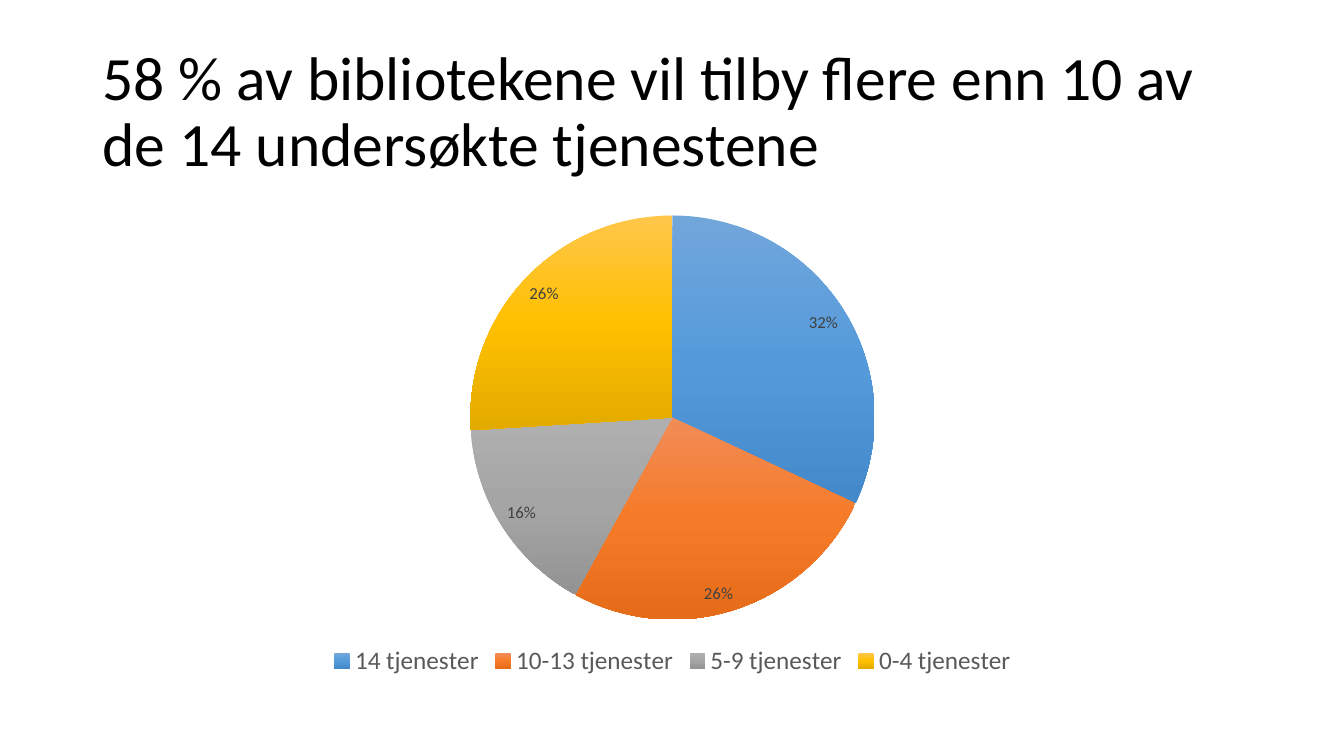
from copy import deepcopy
from dataclasses import dataclass

from pptx import Presentation
from pptx import util as u
from pptx.chart.data import CategoryChartData
from pptx.dml.color import RGBColor
from pptx.enum import chart as ch
from pptx.enum import text
from pptx.oxml import ns


@dataclass(frozen=True)
class Theme:
    font: str = "Calibri"
    title_color: str = "000000"
    legend_color: str = "595959"
    label_color: str = "404040"
    title_size: int = 44
    legend_size: int = 18
    label_size: int = 12
    chart_size: int = 10
    slice_gradients: tuple = (
        ("71A6DB", "559BDB", "448ACA"),
        ("F18C57", "F67B28", "E56C19"),
        ("AFAFAF", "A5A5A5", "939393"),
        ("FFC64B", "FFC000", "E3AB00"),
    )


THEME = Theme()
HEADLINE = "58 % av bibliotekene vil tilby flere enn 10 av de 14 undersøkte tjenestene"
SERVICE_SHARES = {
    "14 tjenester": 0.32,
    "10-13 tjenester": 0.26,
    "5-9 tjenester": 0.16,
    "0-4 tjenester": 0.26,
}


def style_font(font, size, color):
    font.name = THEME.font
    font.size = u.Pt(size)
    font.color.rgb = RGBColor.from_string(color)


def fill_slice(pie_slice, colors):
    fill = pie_slice.format.fill
    fill.gradient()
    fill.gradient_angle = 270
    first_stop = pie_slice.format._element.find(".//" + ns.qn("a:gs"))
    first_stop.addnext(deepcopy(first_stop))
    for stop, color, position in zip(fill.gradient_stops, colors, (0, 0.5, 1)):
        stop.color.rgb = RGBColor.from_string(color)
        stop.position = position


def add_headline(slide, left, top, width, height):
    frame = slide.shapes.add_textbox(left, top, width, height).text_frame
    frame.word_wrap = True
    frame.vertical_anchor = text.MSO_ANCHOR.MIDDLE
    frame.text = HEADLINE
    paragraph = frame.paragraphs[0]
    paragraph.line_spacing = 0.9
    style_font(paragraph.runs[0].font, THEME.title_size, THEME.title_color)


def add_share_pie(slide, left, top, width, height):
    data = CategoryChartData(number_format="0%")
    data.categories = list(SERVICE_SHARES)
    data.add_series("Series 1", list(SERVICE_SHARES.values()))
    pie = slide.shapes.add_chart(
        ch.XL_CHART_TYPE.PIE, left, top, width, height, data
    ).chart
    pie.has_title = False
    style_font(pie.font, THEME.chart_size, THEME.title_color)

    pie.has_legend = True
    pie.legend.position = ch.XL_LEGEND_POSITION.BOTTOM
    pie.legend.include_in_layout = False
    style_font(pie.legend.font, THEME.legend_size, THEME.legend_color)

    plot = pie.plots[0]
    plot.vary_by_categories = True
    shares = plot.series[0]
    for index, colors in enumerate(THEME.slice_gradients):
        fill_slice(shares.points[index], colors)

    labels = shares.data_labels
    labels.show_value = True
    labels.number_format = "0%"
    labels.number_format_is_linked = False
    labels.position = ch.XL_LABEL_POSITION.INSIDE_END
    style_font(labels.font, THEME.label_size, THEME.label_color)


def main():
    presentation = Presentation()
    presentation.slide_width = u.Inches(13.33)
    presentation.slide_height = u.Inches(7.5)
    slide = presentation.slides.add_slide(presentation.slide_layouts[6])
    left, width = u.Inches(0.92), u.Inches(11.5)
    add_headline(slide, left, u.Inches(0.4), width, u.Inches(1.45))
    add_share_pie(slide, left, u.Inches(2), width, u.Inches(4.76))
    presentation.save("out.pptx")


if __name__ == "__main__":
    main()
